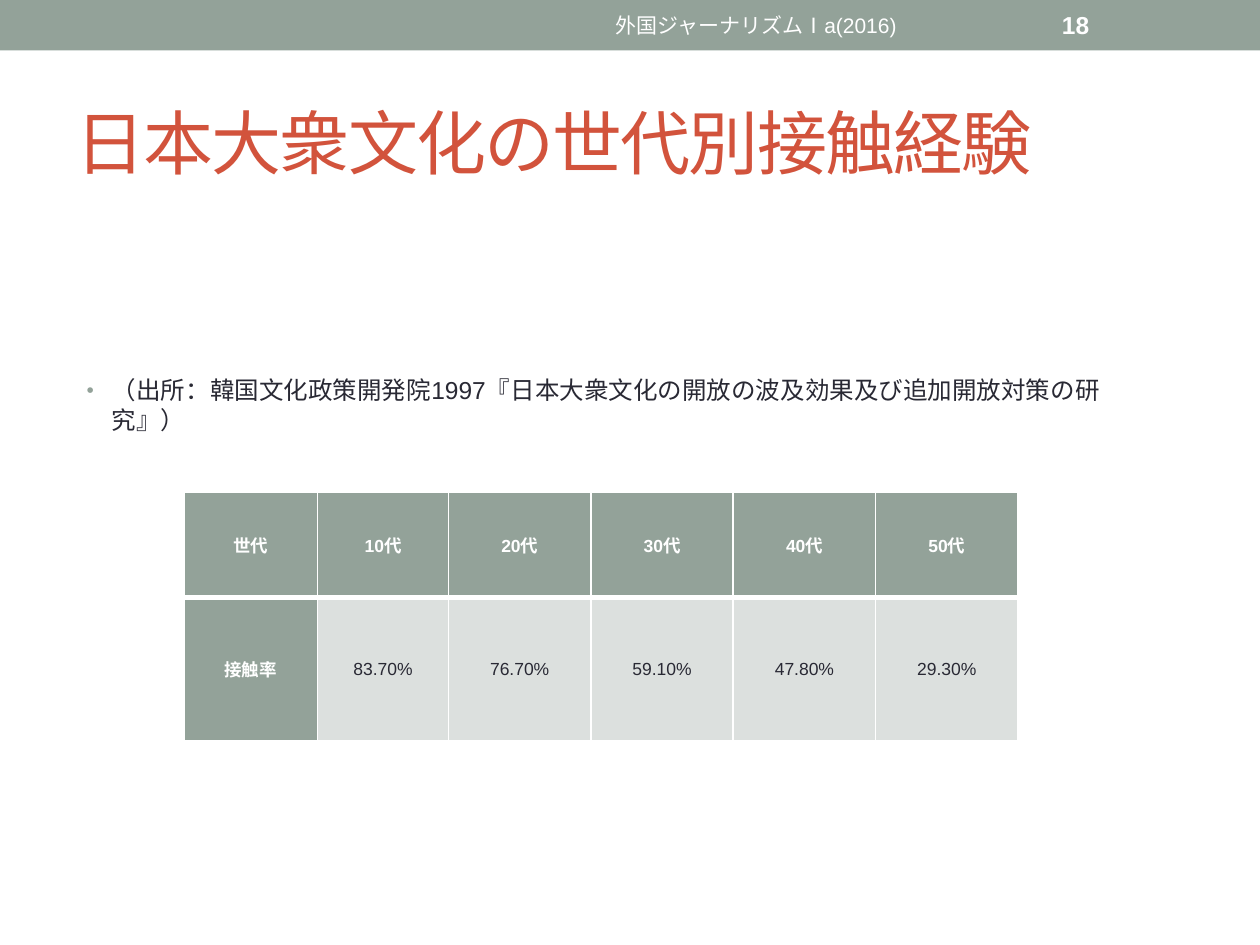
from dataclasses import dataclass

from lxml import etree
from pptx import Presentation
from pptx.dml.color import RGBColor
from pptx.enum.shapes import MSO_SHAPE
from pptx.enum.text import MSO_ANCHOR, PP_ALIGN
from pptx.oxml.ns import qn
from pptx.util import Inches, Pt

RECT = MSO_SHAPE.RECTANGLE
TOP, MIDDLE = MSO_ANCHOR.TOP, MSO_ANCHOR.MIDDLE
LEFT, CENTER = PP_ALIGN.LEFT, PP_ALIGN.CENTER
SAGE, PALE, WHITE, INK, RUST = "93A299", "DCE0DE", "FFFFFF", "292934", "D2533C"


@dataclass
class Label:
    text: str
    box: tuple[float, float, float, float]
    size: float
    color: str
    bold: bool = False
    align: PP_ALIGN = LEFT
    anchor: MSO_ANCHOR = MIDDLE


HEADER = Label("外国ジャーナリズムⅠa(2016)", (3.75, 0.02, 4.5, 0.36), 12, WHITE, align=CENTER)
NUMBER = Label("18", (8.33, 0.02, 1.17, 0.36), 14, WHITE, bold=True)
TITLE = Label("日本大衆文化の世代別接触経験", (0.5, 0.58, 9, 1.08), 40, RUST)
SOURCE = Label(
    "（出所：韓国文化政策開発院1997『日本大衆文化の開放の波及効果及び追加開放対策の研究』）",
    (0.59, 2.93, 8.47, 3.77), 14, INK, anchor=TOP)
ROWS = [
    ["世代", "10代", "20代", "30代", "40代", "50代"],
    ["接触率", "83.70%", "76.70%", "59.10%", "47.80%", "29.30%"],
]
COL_WIDTHS = [1.06, 1.04] + [1.13] * 4
ROW_HEIGHTS = [0.83, 1.14]


def rgb(color: str) -> RGBColor:
    return RGBColor.from_string(color)


def write(p, text: str, size: float, color: str, bold: bool, align: PP_ALIGN):
    p.alignment = align
    r = p.add_run()
    r.text = text
    for name, value in {"name": "Arial", "size": Pt(size), "bold": bold}.items():
        setattr(r.font, name, value)
    r.font.color.rgb = rgb(color)
    return r


def add_label(s, label: Label):
    tf = s.shapes.add_textbox(*map(Inches, label.box)).text_frame
    tf.word_wrap = True
    tf.vertical_anchor = label.anchor
    p = tf.paragraphs[0]
    r = write(p, label.text, label.size, label.color, label.bold, label.align)
    return p, r


def add_bullet(p, color: str) -> None:
    pPr = p._p.get_or_add_pPr()
    pPr.set("marL", str(Inches(0.2)))
    pPr.set("indent", str(Inches(-0.2)))
    bu_clr = etree.SubElement(pPr, qn("a:buClr"))
    etree.SubElement(bu_clr, qn("a:srgbClr"), val=color)
    etree.SubElement(pPr, qn("a:buSzPct"), val="85000")
    etree.SubElement(pPr, qn("a:buFont"), typeface="Arial")
    etree.SubElement(pPr, qn("a:buChar"), char="•")


def add_borders(cell, widths: dict[str, float]) -> None:
    tcPr = cell._tc.get_or_add_tcPr()
    for side, width in widths.items():
        ln = etree.SubElement(tcPr, qn(f"a:ln{side}"), w=str(Pt(width)))
        fill = etree.SubElement(ln, qn("a:solidFill"))
        etree.SubElement(fill, qn("a:srgbClr"), val=WHITE)


def fill_cell(cell, text: str, is_head: bool, borders: dict[str, float]) -> None:
    add_borders(cell, borders)
    cell.fill.solid()
    cell.fill.fore_color.rgb = rgb(SAGE if is_head else PALE)
    layout = {"vertical_anchor": MIDDLE, "margin_left": Inches(0.07),
              "margin_right": Inches(0.07), "margin_top": 0, "margin_bottom": 0}
    for name, value in layout.items():
        setattr(cell, name, value)
    write(cell.text_frame.paragraphs[0], text, 10, WHITE if is_head else INK, is_head, CENTER)


def add_rate_table(s) -> None:
    size = sum(COL_WIDTHS), sum(ROW_HEIGHTS)
    table = s.shapes.add_table(
        len(ROWS), len(COL_WIDTHS), *map(Inches, (1.46, 3.91, *size))).table
    for col, width in zip(table.columns, COL_WIDTHS):
        col.width = Inches(width)
    for row, height in zip(table.rows, ROW_HEIGHTS):
        row.height = Inches(height)
    for i, texts in enumerate(ROWS):
        borders = {"L": 1, "R": 1, "T": 3 if i else 1, "B": 1 if i else 3}
        for j, text in enumerate(texts):
            fill_cell(table.cell(i, j), text, i == 0 or j == 0, borders)


def main() -> None:
    prs = Presentation()
    prs.slide_width, prs.slide_height = Inches(10), Inches(7.5)
    s = prs.slides.add_slide(prs.slide_layouts[6])

    band = s.shapes.add_shape(RECT, 0, 0, Inches(10), Inches(0.4))
    band.shadow.inherit = False
    band.fill.solid()
    band.fill.fore_color.rgb = rgb(SAGE)
    band.line.fill.background()

    _, title_run = add_label(s, TITLE)
    title_run._r.get_or_add_rPr().set("spc", "-100")
    source_p, _ = add_label(s, SOURCE)
    source_p.space_before = Pt(2.8)
    add_bullet(source_p, SAGE)
    for label in (HEADER, NUMBER):
        add_label(s, label)
    add_rate_table(s)
    prs.save("out.pptx")


if __name__ == "__main__":
    main()
